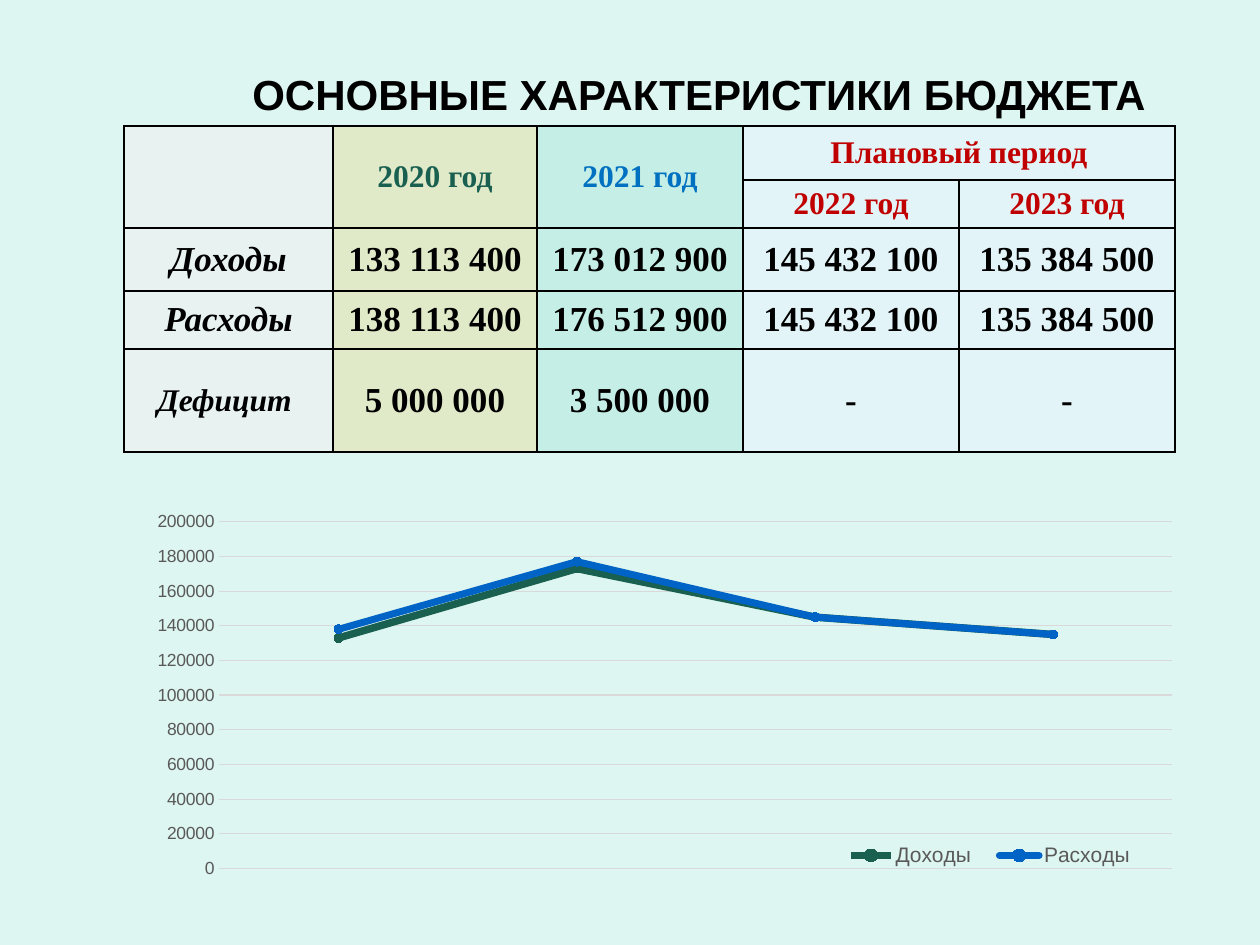
import pptx
import pptx.chart.data
import pptx.dml.color
import pptx.enum.chart
import pptx.enum.text
import pptx.oxml
import pptx.oxml.ns
import pptx.util

RGBColor = pptx.dml.color.RGBColor
PX = 914400 / 126
BACK = RGBColor(0xDE, 0xF6, 0xF1)
BLACK = RGBColor(0, 0, 0)
GREY = RGBColor(0x59, 0x59, 0x59)
GRID = RGBColor(0xD9, 0xD9, 0xD9)
GREEN = RGBColor(0x19, 0x60, 0x51)
BLUE = RGBColor(0x00, 0x70, 0xC0)
RED = RGBColor(0xC0, 0, 0)
LINE_BLUE = RGBColor(0x00, 0x63, 0xC6)
PALE_GREY = RGBColor(0xF2, 0xF2, 0xF2)
SAND = RGBColor(0xE6, 0xCC, 0x6C)
MINT = RGBColor(0x8C, 0xE1, 0xCF)
SKY = RGBColor(0xE8, 0xF4, 0xFF)


def px(*values):
    return [pptx.util.Emu(round(v * PX)) for v in values]


def xml(text):
    return pptx.oxml.parse_xml(text.replace(">", " " + pptx.oxml.ns.nsdecls("a", "c") + ">", 1))


prs = pptx.Presentation()
prs.slide_width, prs.slide_height = px(1260, 945)
s = prs.slides.add_slide(prs.slide_layouts[5])
s.background.fill.solid()
s.background.fill.fore_color.rgb = BACK

# Title
title = s.shapes.title
title.left, title.top, title.width, title.height = px(195, 50, 1008, 87)
tf = title.text_frame
tf.vertical_anchor = pptx.enum.text.MSO_ANCHOR.MIDDLE
p = tf.paragraphs[0]
p.alignment = pptx.enum.text.PP_ALIGN.CENTER
r = p.add_run()
r.text = "ОСНОВНЫЕ ХАРАКТЕРИСТИКИ БЮДЖЕТА"
r.font.name, r.font.size, r.font.bold = "Arial", pptx.util.Pt(24), True
r.font.color.rgb = BLACK

# Budget table
rows = [
    ["", "2020 год", "2021 год", "Плановый период", ""],
    ["", "", "", "2022 год", "2023 год"],
    ["Доходы", "133 113 400", "173 012 900", "145 432 100", "135 384 500"],
    ["Расходы", "138 113 400", "176 512 900", "145 432 100", "135 384 500"],
    ["Дефицит ", "5 000 000", "3 500 000", "-", "-"],
]
widths = px(209, 204, 206, 216, 216)
heights = px(54, 48, 63, 58, 103)
fills = [(PALE_GREY, 53), (SAND, 30), (MINT, 30), (SKY, 50), (SKY, 50)]
head_colors = [BLACK, GREEN, BLUE, RED, RED]
frame = s.shapes.add_table(5, 5, *px(124, 126), sum(widths), sum(heights))
table = frame.table
table.first_row = table.horz_banding = False
for column, width in zip(table.columns, widths):
    column.width = width
for row, height in zip(table.rows, heights):
    row.height = height
for i, row in enumerate(rows):
    for j, text in enumerate(row):
        cell = table.cell(i, j)
        cell.margin_left = cell.margin_right = px(9)[0]
        cell.margin_top = cell.margin_bottom = 0
        cell.vertical_anchor = pptx.enum.text.MSO_ANCHOR.MIDDLE
        color, alpha = fills[j]
        cell.fill.solid()
        cell.fill.fore_color.rgb = color
        tc_pr = cell._tc.tcPr
        tc_pr.find(".//" + pptx.oxml.ns.qn("a:srgbClr")).append(
            xml(f'<a:alpha val="{alpha * 1000}"></a:alpha>'))
        for k, side in enumerate("LRTB"):
            tc_pr.insert(k, xml(f'<a:ln{side} w="12700"><a:solidFill><a:srgbClr val="{BLACK}"/>'
                                f'</a:solidFill></a:ln{side}>'))
        if not text:
            continue
        p = cell.text_frame.paragraphs[0]
        p.alignment = pptx.enum.text.PP_ALIGN.CENTER
        r = p.add_run()
        r.text = text
        r.font.name, r.font.bold, r.font.italic = "Times New Roman", True, j == 0
        r.font.size = pptx.util.Pt(18 if i < 2 or (i, j) == (4, 0) else 20)
        r.font.color.rgb = head_colors[j] if i < 2 else BLACK
for j in range(3):
    table.cell(0, j).merge(table.cell(1, j))
table.cell(0, 3).merge(table.cell(0, 4))

# Line chart, in thousands
data = pptx.chart.data.CategoryChartData()
data.categories = ["1", "2", "3", "4"]
data.add_series("Доходы", [133000, 173000, 145000, 135000])
data.add_series("Расходы", [138000, 177000, 145000, 135000])
chart = s.shapes.add_chart(pptx.enum.chart.XL_CHART_TYPE.LINE_MARKERS,
                           *px(123, 503, 1071, 377), data).chart
chart.has_title = False
chart.font.name, chart.font.size = "Arial", pptx.util.Pt(10)
chart.font.color.rgb = BLACK
for series, color, width in zip(chart.plots[0].series, [GREEN, LINE_BLUE], [4.25, 4]):
    series.smooth = False
    series.format.line.width = pptx.util.Pt(width)
    series.marker.style = pptx.enum.chart.XL_MARKER_STYLE.CIRCLE
    series.marker.size = 5
    series.marker.format.fill.solid()
    for fill in (series.format.line.fill, series.marker.format.fill, series.marker.format.line.fill):
        fill.solid()
        fill.fore_color.rgb = color
# The last series has round line ends
series._element.spPr.find(pptx.oxml.ns.qn("a:ln")).set("cap", "rnd")

# Axes
chart.category_axis.visible = False
axis = chart.value_axis
axis.minimum_scale, axis.maximum_scale, axis.major_unit = 0, 200000, 20000
axis.major_tick_mark = pptx.enum.chart.XL_TICK_MARK.NONE
axis.format.line.fill.background()
axis.major_gridlines.format.line.width = pptx.util.Pt(0.75)
axis.major_gridlines.format.line.color.rgb = GRID

# Legend
chart.has_legend = True
legend = chart.legend
legend.position = pptx.enum.chart.XL_LEGEND_POSITION.BOTTOM
legend.include_in_layout = False
for font, size in ((axis.tick_labels.font, 10), (legend.font, 12)):
    font.name, font.size = "Arial", pptx.util.Pt(size)
    font.color.rgb = GREY

# Fixed places of the plot area and the legend
plot_area = chart._chartSpace.chart.plotArea
for parent in (plot_area, legend._element):
    for old in parent.findall(pptx.oxml.ns.qn("c:layout")):
        parent.remove(old)
for parent, index, target, box in (
        (plot_area, 0, '<c:layoutTarget val="inner"/>', (0.09, 0.05, 0.89, 0.92)),
        (legend._element, 1, "", (0.66, 0.89, 0.3, 0.09))):
    modes = '<c:xMode val="edge"/><c:yMode val="edge"/>'
    sizes = "".join(f'<c:{name} val="{v}"/>' for name, v in zip("xywh", box))
    parent.insert(index, xml(f"<c:layout><c:manualLayout>{target}{modes}{sizes}"
                             "</c:manualLayout></c:layout>"))

prs.save("out.pptx")
